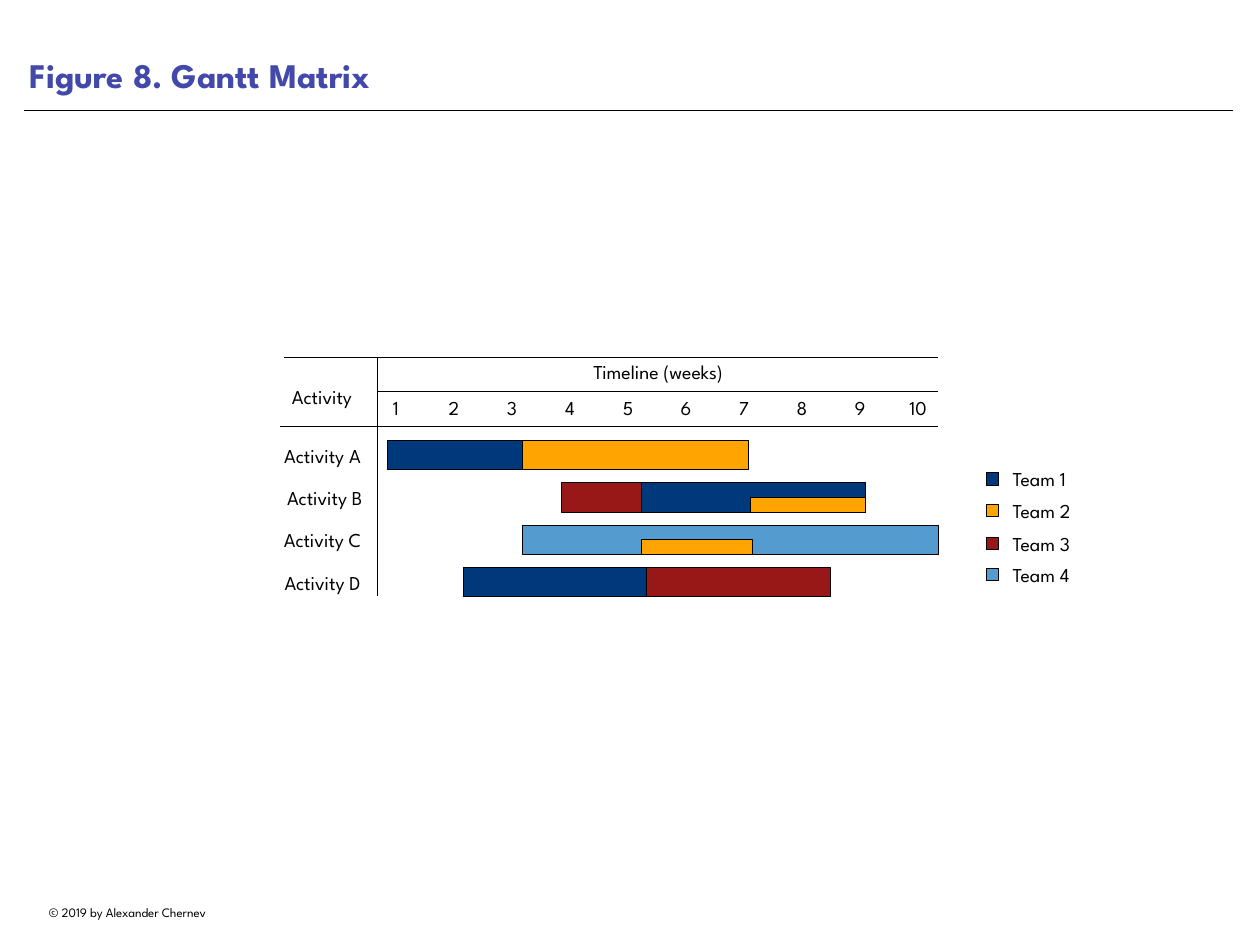
from dataclasses import dataclass

from lxml.etree import SubElement
from pptx import Presentation
from pptx.dml.color import RGBColor
from pptx.enum.shapes import MSO_CONNECTOR as Connector, MSO_SHAPE as Shape
from pptx.enum.text import MSO_ANCHOR as Anchor, PP_ALIGN as Align
from pptx.oxml.ns import qn
from pptx.slide import Slide
from pptx.util import Pt


@dataclass(frozen=True)
class Theme:
    font: str = "League Spartan"
    ink: RGBColor = RGBColor.from_string("000000")
    title: RGBColor = RGBColor.from_string("4349AA")
    navy: RGBColor = RGBColor.from_string("00397B")
    orange: RGBColor = RGBColor.from_string("FFA400")
    red: RGBColor = RGBColor.from_string("971817")
    sky: RGBColor = RGBColor.from_string("549CCF")
    title_size: float = 28
    body_size: float = 16
    footer_size: float = 10.5
    outline: float = 0.75
    title_rule: float = 0.5


@dataclass(frozen=True)
class Box:
    left: float
    top: float
    width: float
    height: float


@dataclass(frozen=True)
class Label:
    text: str
    box: Box
    size: float
    align: Align = Align.CENTER
    anchor: Anchor = Anchor.MIDDLE
    color: RGBColor = Theme.ink
    bold: bool = False
    wrap: bool = True
    inset_x: float = 4.3
    inset_y: float = 4.3


@dataclass(frozen=True)
class Rule:
    x1: float
    y1: float
    x2: float
    y2: float
    weight: float = Theme.outline


@dataclass(frozen=True)
class Team:
    name: str
    color: RGBColor
    center: float


@dataclass(frozen=True)
class Bar:
    start: float
    end: float
    team: Team
    shared: bool = False


@dataclass(frozen=True)
class Activity:
    name: str
    label_left: float
    bars: tuple[Bar, ...]


THEME = Theme()
TEAM_1 = Team("Team 1", THEME.navy, 389.4)
TEAM_2 = Team("Team 2", THEME.orange, 414.8)
TEAM_3 = Team("Team 3", THEME.red, 441.9)
TEAM_4 = Team("Team 4", THEME.sky, 467.1)
TEAMS = (TEAM_1, TEAM_2, TEAM_3, TEAM_4)

ACTIVITIES = (
    Activity("Activity A", 218.2, (Bar(315, 425, TEAM_1), Bar(425, 608.4, TEAM_2))),
    Activity("Activity B", 221.8, (
        Bar(456.5, 521.4, TEAM_3),
        Bar(521.4, 703.4, TEAM_1),
        Bar(609.8, 703.4, TEAM_2, shared=True),
    )),
    Activity("Activity C", 218.2, (
        Bar(424.6, 763, TEAM_4),
        Bar(521.4, 611.5, TEAM_2, shared=True),
    )),
    Activity("Activity D", 218.2, (Bar(376.6, 525.6, TEAM_1), Bar(525.6, 674.6, TEAM_3))),
)

RULES = (
    Rule(19.4, 89.3, 1002.2, 89.3, THEME.title_rule),
    Rule(231, 290.2, 762, 290.2),
    Rule(227.5, 346.8, 762.5, 346.8),
    Rule(307, 318.2, 762.5, 318.2),
    Rule(307, 484, 307, 290.2),
)

LABELS = (
    Label("© 2019 by Alexander Chernev", Box(19.4, 731.5, 168.5, 20.2), THEME.footer_size,
          anchor=Anchor.TOP, wrap=False, inset_x=7.2, inset_y=3.6),
    Label("Figure 8. Gantt Matrix", Box(19.4, 0, 982.1, 82.8), THEME.title_size,
          Align.LEFT, Anchor.BOTTOM, THEME.title, bold=True, inset_x=5, inset_y=5),
    Label("Activity", Box(223.2, 308.2, 77, 28.8), THEME.body_size),
    Label("Timeline (weeks)", Box(460, 288, 149.8, 28.8), THEME.body_size),
)

WEEK_COUNT, FIRST_WEEK_X, WEEK_PITCH = 10, 321.8, 47.15
WEEK_TOP, WEEK_WIDTH, WEEK_HEIGHT = 317.5, 28, 26
FIRST_ROW_Y, ROW_PITCH, BAR_HEIGHT = 370, 34.4, 23.8
LABEL_RIGHT, LABEL_HEIGHT = 306, 28
MARKER_LEFT, MARKER_SIZE = 801.4, 10.1
TEAM_LEFT, TEAM_WIDTH = 818.6, 64.8


def add_label(slide: Slide, label: Label) -> None:
    """Write one line of text in a box."""
    box = label.box
    shape = slide.shapes.add_textbox(Pt(box.left), Pt(box.top), Pt(box.width), Pt(box.height))
    frame = shape.text_frame
    frame.word_wrap = label.wrap
    frame.vertical_anchor = label.anchor
    frame.margin_left = frame.margin_right = Pt(label.inset_x)
    frame.margin_top = frame.margin_bottom = Pt(label.inset_y)
    paragraph = frame.paragraphs[0]
    paragraph.text = label.text
    paragraph.alignment = label.align
    paragraph.font.name = THEME.font
    paragraph.font.size = Pt(label.size)
    paragraph.font.bold = label.bold
    paragraph.font.color.rgb = label.color


def add_block(slide: Slide, box: Box, color: RGBColor) -> None:
    """Draw a filled, outlined rectangle."""
    shape = slide.shapes.add_shape(
        Shape.RECTANGLE, Pt(box.left), Pt(box.top), Pt(box.width), Pt(box.height))
    shape.shadow.inherit = False
    shape.fill.solid()
    shape.fill.fore_color.rgb = color
    shape.line.color.rgb = THEME.ink
    shape.line.width = Pt(THEME.outline)


def add_rule(slide: Slide, rule: Rule) -> None:
    """Draw a straight line without a shadow."""
    connector = slide.shapes.add_connector(
        Connector.STRAIGHT, Pt(rule.x1), Pt(rule.y1), Pt(rule.x2), Pt(rule.y2))
    connector.line.color.rgb = THEME.ink
    connector.line.width = Pt(rule.weight)
    SubElement(connector._element.spPr, qn("a:effectLst"))


def add_weeks(slide: Slide) -> None:
    """Number the weeks along the timeline."""
    for index in range(WEEK_COUNT):
        left = FIRST_WEEK_X + index * WEEK_PITCH - WEEK_WIDTH / 2
        box = Box(left, WEEK_TOP, WEEK_WIDTH, WEEK_HEIGHT)
        add_label(slide, Label(str(index + 1), box, THEME.body_size, anchor=Anchor.TOP))


def add_activity(slide: Slide, activity: Activity, center: float) -> None:
    """Draw an activity's name and bars, shared bars filling the lower half."""
    box = Box(activity.label_left, center - LABEL_HEIGHT / 2,
              LABEL_RIGHT - activity.label_left, LABEL_HEIGHT)
    add_label(slide, Label(activity.name, box, THEME.body_size))
    bottom = center + BAR_HEIGHT / 2
    for bar in activity.bars:
        height = BAR_HEIGHT / 2 if bar.shared else BAR_HEIGHT
        add_block(slide, Box(bar.start, bottom - height, bar.end - bar.start, height),
                  bar.team.color)


def add_team(slide: Slide, team: Team) -> None:
    """Draw one legend entry."""
    add_block(slide, Box(MARKER_LEFT, team.center - MARKER_SIZE / 2, MARKER_SIZE, MARKER_SIZE),
              team.color)
    box = Box(TEAM_LEFT, team.center - LABEL_HEIGHT / 2, TEAM_WIDTH, LABEL_HEIGHT)
    add_label(slide, Label(team.name, box, THEME.body_size, Align.LEFT, wrap=False))


def main() -> None:
    """Build the Gantt matrix slide."""
    presentation = Presentation()
    presentation.slide_width, presentation.slide_height = Pt(1024), Pt(768)
    slide = presentation.slides.add_slide(presentation.slide_layouts[6])
    for rule in RULES:
        add_rule(slide, rule)
    for label in LABELS:
        add_label(slide, label)
    add_weeks(slide)
    for index, activity in enumerate(ACTIVITIES):
        add_activity(slide, activity, FIRST_ROW_Y + index * ROW_PITCH)
    for team in TEAMS:
        add_team(slide, team)
    presentation.save("out.pptx")


if __name__ == "__main__":
    main()
